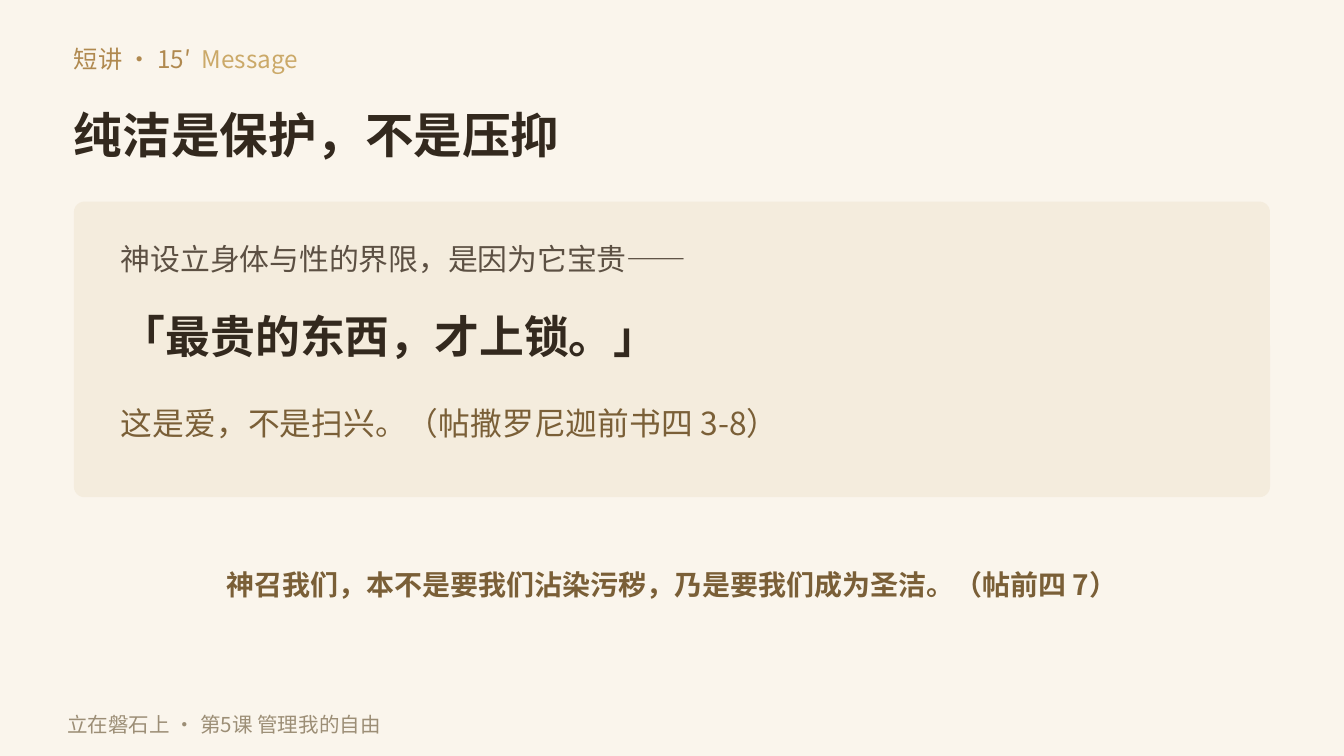
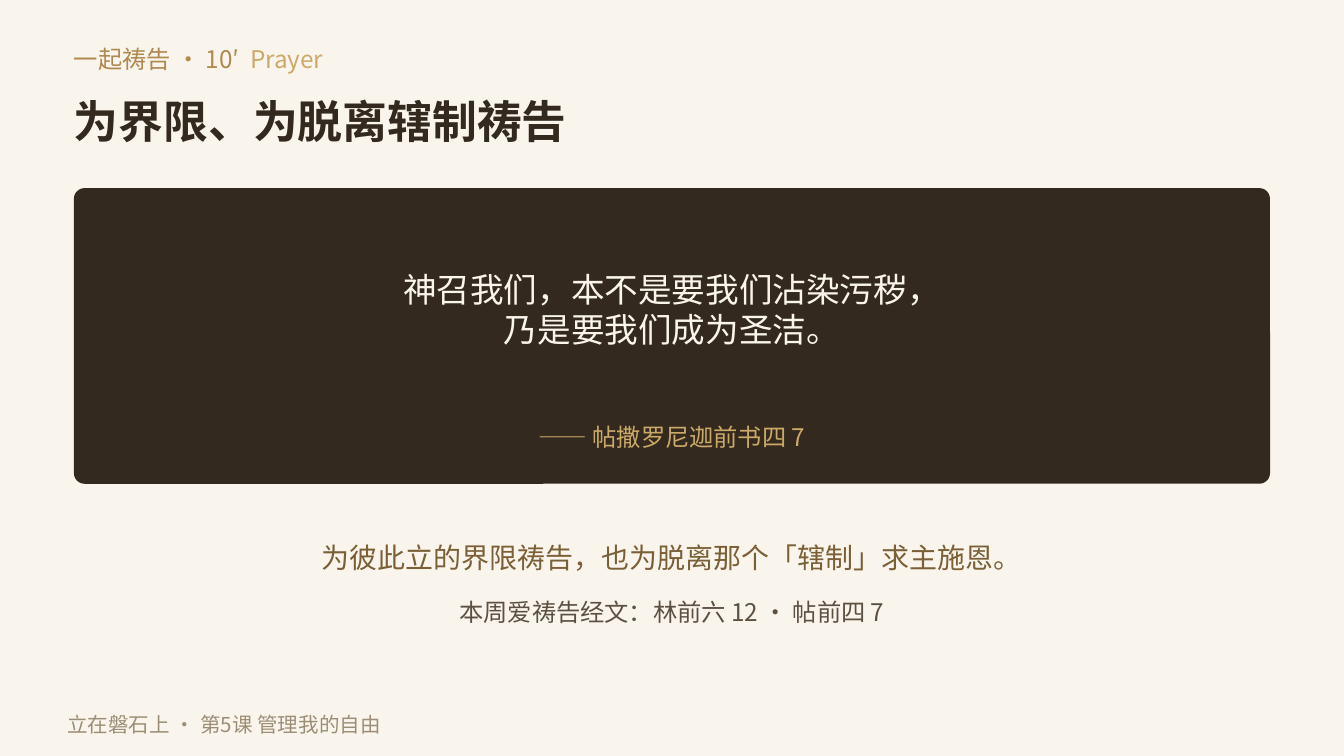
from lxml import etree
from pptx import Presentation
from pptx.dml.color import RGBColor
from pptx.enum.shapes import MSO_SHAPE
from pptx.enum.text import MSO_ANCHOR, MSO_AUTO_SIZE, PP_ALIGN
from pptx.oxml.ns import qn
from pptx.util import Emu, Pt

ROUNDED = MSO_SHAPE.ROUNDED_RECTANGLE
MIDDLE = MSO_ANCHOR.MIDDLE
NO_AUTOFIT = MSO_AUTO_SIZE.NONE
LEFT = PP_ALIGN.LEFT
CENTER = PP_ALIGN.CENTER

EMU_PER_PX = 4572
SLIDE_WIDTH, SLIDE_HEIGHT = 2000, 1125
MARGIN = 110
CONTENT_WIDTH = SLIDE_WIDTH - 2 * MARGIN
PANEL_HEIGHT = 440
TITLE_ONLY = 5

FONT = "Noto Sans CJK SC"
CREAM = "FAF5EC"
SAND = "F4ECDD"
DARK = "33291E"
GREY_BROWN = "5C5043"
BROWN = "7A5F37"
BRONZE = "B0894F"
GOLD = "CBA968"
FOOTER_COLOR = "9C8E76"
FOOTER_TEXT = "立在磐石上 · 第5课 管理我的自由"


def px(length):
    return Emu(length * EMU_PER_PX)


def color(value):
    return RGBColor.from_string(value)


def add_run(paragraph, text, size, text_color, bold=False):
    run = paragraph.add_run()
    run.text = text
    font = run.font
    font.size = Pt(size)
    font.bold = bold
    font.color.rgb = color(text_color)
    font.name = FONT
    east_asian = etree.SubElement(run._r.get_or_add_rPr(), qn("a:ea"))
    east_asian.set("typeface", FONT)


def format_frame(shape):
    frame = shape.text_frame
    frame.word_wrap = True
    frame.auto_size = NO_AUTOFIT
    frame.vertical_anchor = MIDDLE
    frame.margin_left = frame.margin_top = 0
    frame.margin_right = frame.margin_bottom = 0
    return frame


def add_text(slide, box, lines, size, text_color, bold=False, alignment=LEFT):
    shape = slide.shapes.add_textbox(*map(px, box))
    frame = format_frame(shape)
    for index, line in enumerate(lines):
        paragraph = frame.add_paragraph() if index else frame.paragraphs[0]
        paragraph.alignment = alignment
        add_run(paragraph, line, size, text_color, bold)
    return frame


def add_panel(slide, top, fill):
    panel = slide.shapes.add_shape(
        ROUNDED, px(MARGIN), px(top), px(CONTENT_WIDTH), px(PANEL_HEIGHT))
    panel.adjustments[0] = 0.036
    panel.shadow.inherit = False
    panel.fill.solid()
    panel.fill.fore_color.rgb = color(fill)
    panel.line.fill.background()


def set_title(slide, text, top, height, size):
    title = slide.shapes.title
    title.left, title.top = px(MARGIN), px(top)
    title.width, title.height = px(1800), px(height)
    paragraph = format_frame(title).paragraphs[0]
    paragraph.alignment = LEFT
    add_run(paragraph, text, size, DARK, True)


def add_section_label(slide, section, english):
    frame = add_text(slide, (MARGIN, 56, 1700, 64), [section], 13, BRONZE)
    add_run(frame.paragraphs[0], english, 13, GOLD)


def add_slide(presentation, section, english):
    slide = presentation.slides.add_slide(presentation.slide_layouts[TITLE_ONLY])
    add_section_label(slide, section, english)
    add_text(slide, (100, 1050, 1500, 56), [FOOTER_TEXT], 11, FOOTER_COLOR)
    return slide


def build_message(presentation):
    slide = add_slide(presentation, "短讲 · 15′  ", "Message")
    set_title(slide, "纯洁是保护，不是压抑", 150, 100, 26)
    add_panel(slide, 300, SAND)
    panel_lines = [
        (350, 70, "神设立身体与性的界限，是因为它宝贵——", 16, GREY_BROWN, False),
        (450, 100, "「最贵的东西，才上锁。」", 24, DARK, True),
        (590, 80, "这是爱，不是扫兴。（帖撒罗尼迦前书四 3-8）", 17, BROWN, False),
    ]
    for top, height, text, size, text_color, bold in panel_lines:
        add_text(slide, (180, top, 1640, height), [text], size, text_color, bold)
    add_text(slide, (MARGIN, 830, CONTENT_WIDTH, 80),
             ["神召我们，本不是要我们沾染污秽，乃是要我们成为圣洁。（帖前四 7）"],
             15, BROWN, True, CENTER)


def build_prayer(presentation):
    slide = add_slide(presentation, "一起祷告 · 10′  ", "Prayer")
    set_title(slide, "为界限、为脱离辖制祷告", 140, 80, 24)
    add_panel(slide, 280, DARK)
    verse = ["神召我们，本不是要我们沾染污秽，", "乃是要我们成为圣洁。"]
    centered_texts = [
        ((190, 350, 1620, 220), verse, 18, CREAM),
        ((190, 620, 1620, 60), ["—— 帖撒罗尼迦前书四 7"], 13, GOLD),
        ((MARGIN, 790, CONTENT_WIDTH, 80),
         ["为彼此立的界限祷告，也为脱离那个「辖制」求主施恩。"], 15, BROWN),
        ((MARGIN, 880, CONTENT_WIDTH, 60),
         ["本周爱祷告经文：林前六 12 · 帖前四 7"], 13, GREY_BROWN),
    ]
    for box, lines, size, text_color in centered_texts:
        add_text(slide, box, lines, size, text_color, alignment=CENTER)


def main():
    presentation = Presentation()
    presentation.slide_width = px(SLIDE_WIDTH)
    presentation.slide_height = px(SLIDE_HEIGHT)
    background = presentation.slide_master.background.fill
    background.solid()
    background.fore_color.rgb = color(CREAM)
    build_message(presentation)
    build_prayer(presentation)
    presentation.save("out.pptx")


if __name__ == "__main__":
    main()
